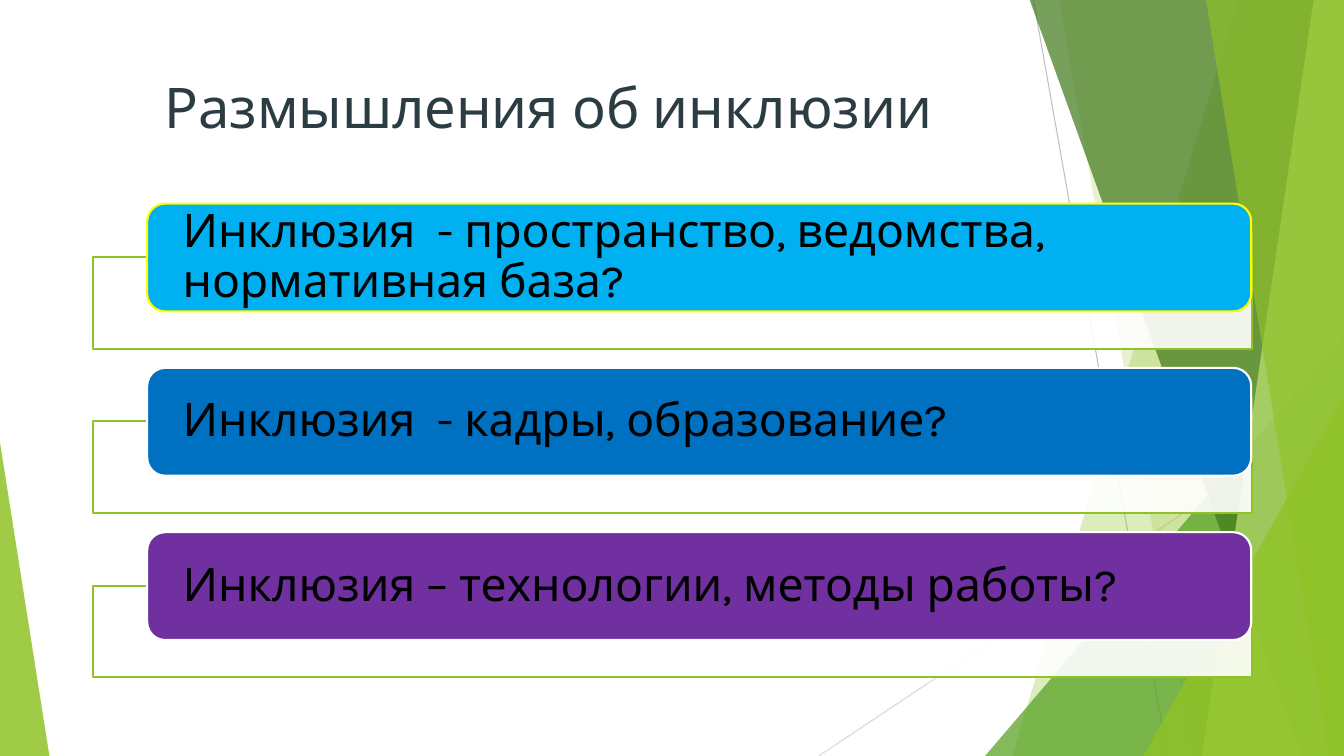
import lxml.etree
import pptx
import pptx.dml.color
import pptx.enum.shapes
import pptx.enum.text
import pptx.oxml.ns
import pptx.util

PX = 9144  # EMU per px, 100 px to the inch
WIDTH, HEIGHT = 1333, 750
SHAPES = pptx.enum.shapes.MSO_SHAPE
ALIGN = pptx.enum.text.PP_ALIGN
ANCHOR = pptx.enum.text.MSO_ANCHOR


def color(hex_string):
    return pptx.dml.color.RGBColor.from_string(hex_string)


class SlideBuilder:
    font = "Karla"
    green = "90C226"

    def __init__(self, slide):
        self.slide = slide
        self.shapes = slide.shapes

    def paint(self, shape, fill, opacity=100, line=None):
        shape.shadow.inherit = False
        shape.fill.solid()
        shape.fill.fore_color.rgb = color(fill)
        if opacity < 100:
            tag = pptx.oxml.ns.qn("a:srgbClr")
            fill_color = next(shape._element.spPr.iter(tag))
            alpha = lxml.etree.SubElement(fill_color, pptx.oxml.ns.qn("a:alpha"))
            alpha.set("val", str(opacity * 1000))
        if line:
            shape.line.color.rgb = color(line)
            shape.line.width = pptx.util.Pt(1.5)
        else:
            shape.line.fill.background()

    def shape(self, kind, bounds, fill, opacity=100, line=None):
        shape = self.shapes.add_shape(kind, *(value * PX for value in bounds))
        self.paint(shape, fill, opacity, line)
        return shape

    def triangle(self, bounds, apex, fill, opacity):
        shape = self.shape(SHAPES.ISOSCELES_TRIANGLE, bounds, fill, opacity)
        shape.adjustments[0] = apex

    def facet(self, top_x, bottom_x, fill, opacity):
        """Band between a slanted left edge and the right side of the slide."""
        builder = self.shapes.build_freeform(top_x, -1, scale=PX)
        builder.add_line_segments([(WIDTH, -1), (WIDTH, HEIGHT), (bottom_x, HEIGHT)])
        self.paint(builder.convert_to_shape(), fill, opacity)

    def line(self, start, end, stroke):
        connector = self.shapes.add_connector(
            pptx.enum.shapes.MSO_CONNECTOR.STRAIGHT,
            *(value * PX for value in start + end))
        connector.line.color.rgb = color(stroke)
        connector.line.width = pptx.util.Pt(0.75)
        properties = connector._element.spPr
        lxml.etree.SubElement(properties, pptx.oxml.ns.qn("a:effectLst"))

    def set_text(self, shape, text, size, ink, align, anchor):
        frame = shape.text_frame
        frame.word_wrap = True
        frame.vertical_anchor = anchor
        frame.text = text
        para = frame.paragraphs[0]
        para.alignment = align
        font = para.runs[0].font
        font.name = self.font
        font.size = pptx.util.Pt(size)
        font.color.rgb = color(ink)
        return frame

    def title(self, bounds, text):
        box = self.shapes.add_textbox(*(value * PX for value in bounds))
        self.set_text(box, text, 40, "2C3C43", ALIGN.CENTER, ANCHOR.TOP)

    def question(self, top, text, fill, line):
        """Outlined panel with a rounded heading overlapping its top edge."""
        self.shape(SHAPES.RECTANGLE, (92, top + 53, 1150, 91), "FFFFFF", 90, self.green)
        label = self.shape(SHAPES.ROUNDED_RECTANGLE, (146, top, 1095, 107), fill, line=line)
        frame = self.set_text(label, text, 33, "000000", ALIGN.LEFT, ANCHOR.MIDDLE)
        frame.margin_left = frame.margin_right = 30 * PX
        frame.margin_top = frame.margin_bottom = 0
        frame.paragraphs[0].line_spacing = 0.9


def main():
    deck = pptx.Presentation()
    deck.slide_width, deck.slide_height = WIDTH * PX, HEIGHT * PX
    page = SlideBuilder(deck.slides.add_slide(deck.slide_layouts[6]))

    # Faceted background
    page.line((1025, 0), (1158, HEIGHT), "BFBFBF")
    page.line((WIDTH, 403), (812, HEIGHT), "D9D9D9")
    page.facet(1228, 1004, page.green, 30)
    page.facet(1050, 1183, page.green, 20)
    page.triangle((977, 333, 356, 417), 1, "54A021", 72)
    page.facet(1021, 1291, "3F7819", 70)
    page.facet(1303, 1192, "C0E474", 70)
    page.facet(1196, 1318, page.green, 65)
    page.triangle((1134, 393, 199, 357), 1, page.green, 80)
    page.triangle((0, 439, 49, 311), 0, page.green, 85)

    # Title
    page.title((74, 67, 940, 144), "Размышления об инклюзии")

    # Questions, evenly spaced
    questions = [
        ("Инклюзия  - пространство, ведомства, нормативная база?", "00B0F0", "FFFF00"),
        ("Инклюзия  - кадры, образование?", "0070C0", "FFFFFF"),
        ("Инклюзия – технологии, методы работы?", "7030A0", "FFFFFF"),
    ]
    for index, (text, fill, line) in enumerate(questions):
        page.question(202 + index * 163, text, fill, line)

    deck.save("out.pptx")


if __name__ == "__main__":
    main()
